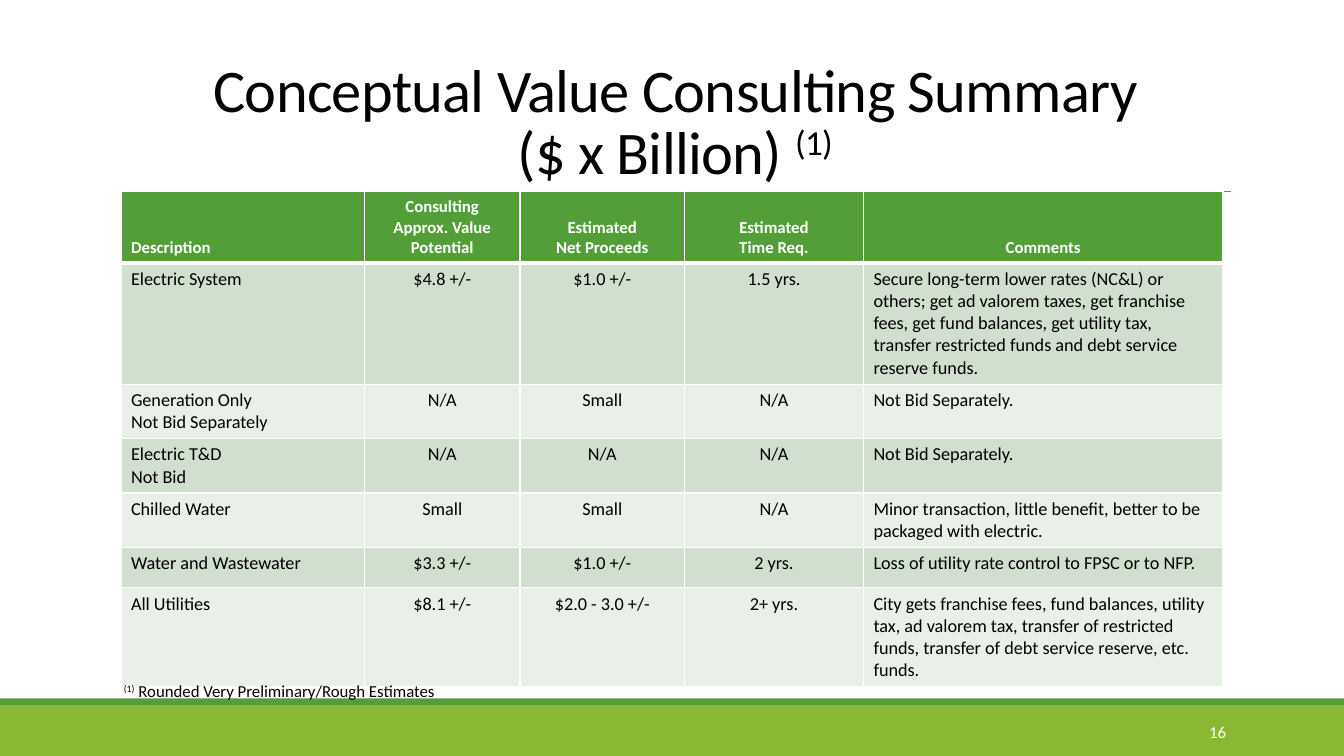
from lxml.etree import SubElement
from pptx import Presentation
from pptx.dml.color import RGBColor
from pptx.enum.shapes import MSO_CONNECTOR, MSO_SHAPE
from pptx.enum.text import MSO_ANCHOR, MSO_AUTO_SIZE, PP_ALIGN
from pptx.oxml.ns import qn
from pptx.util import Inches, Pt

GRID_COLUMNS, GRID_ROWS = 160, 90
GREEN, LIME, WHITE, BLACK, GRAY = "549E39", "8AB833", "FFFFFF", "000000", "808080"
BANDS = ("D1DFCE", "E9F0E8")
COLUMN_WIDTHS = (29, 18.5, 19.6, 21.3, 42.8)
ROW_HEIGHTS = (8.3, 13.9, 6.24, 6.24, 6.24, 4.8, 11.4)
VALUES = (
    ("Description", "Consulting\nApprox. Value\nPotential", "Estimated\nNet Proceeds",
     "Estimated\nTime Req.", "Comments"),
    ("Electric System", "$4.8 +/-", "$1.0 +/-", "1.5 yrs.",
     "Secure long-term lower rates (NC&L) or others; get ad valorem taxes, "
     "get franchise fees, get fund balances, get utility tax, transfer "
     "restricted funds and debt service reserve funds."),
    ("Generation Only\nNot Bid Separately", "N/A", "Small", "N/A", "Not Bid Separately."),
    ("Electric T&D\nNot Bid", "N/A", "N/A", "N/A", "Not Bid Separately."),
    ("Chilled Water", "Small", "Small", "N/A",
     "Minor transaction, little benefit, better to be packaged with electric."),
    ("Water and Wastewater", "$3.3 +/-", "$1.0 +/-", "2 yrs.",
     "Loss of utility rate control to FPSC or to NFP."),
    ("All Utilities", "$8.1 +/-", "$2.0 - 3.0 +/-", "2+ yrs.",
     "City gets franchise fees, fund balances, utility tax, ad valorem tax, "
     "transfer of restricted funds, transfer of debt service reserve, etc. funds."),
)


def color(value):
    return RGBColor.from_string(value)


def write(frame, text, size=12, fill=BLACK, bold=False, align=PP_ALIGN.LEFT,
          anchor=MSO_ANCHOR.TOP, line_spacing=None, tracking=None):
    """Lines become paragraphs, | breaks a line and ^ marks superscript."""
    frame.word_wrap = True
    frame.vertical_anchor = anchor
    for index, line in enumerate(text.split("\n")):
        paragraph = frame.add_paragraph() if index else frame.paragraphs[0]
        paragraph.alignment = align
        paragraph.line_spacing = line_spacing
        for part_index, part in enumerate(line.split("|")):
            if part_index:
                paragraph.add_line_break()
            for piece_index, piece in enumerate(part.split("^")):
                if not piece:
                    continue
                run = paragraph.add_run()
                run.text = piece
                run.font.name = "Calibri"
                run.font.size = Pt(size)
                run.font.bold = bold
                run.font.color.rgb = color(fill)
                properties = run.font._element
                if tracking is not None:
                    properties.set("spc", str(int(tracking * 100)))
                if piece_index % 2:
                    properties.set("baseline", "30000")


class SlideBuilder:
    def __init__(self, presentation):
        self.column = presentation.slide_width / GRID_COLUMNS
        self.row = presentation.slide_height / GRID_ROWS
        self.slide = presentation.slides.add_slide(presentation.slide_layouts[5])

    def area(self, left, top, width, height):
        return (round(left * self.column), round(top * self.row),
                round(width * self.column), round(height * self.row))

    def band(self, place, fill):
        shape = self.slide.shapes.add_shape(MSO_SHAPE.RECTANGLE, *self.area(*place))
        shape.shadow.inherit = False
        shape.fill.solid()
        shape.fill.fore_color.rgb = color(fill)
        shape.line.fill.background()

    def rule(self, left, right, top):
        start_x, start_y, end_x, end_y = self.area(left, top, right, top)
        connector = self.slide.shapes.add_connector(
            MSO_CONNECTOR.STRAIGHT, start_x, start_y, end_x, end_y)
        connector.line.color.rgb = color(GRAY)
        connector.line.width = Pt(0.5)
        SubElement(connector._element.spPr, qn("a:effectLst"))

    def title(self, place, text, **style):
        shape = self.slide.shapes.title
        shape.left, shape.top, shape.width, shape.height = self.area(*place)
        shape.text_frame.auto_size = MSO_AUTO_SIZE.NONE
        write(shape.text_frame, text, **style)

    def text(self, place, text, **style):
        shape = self.slide.shapes.add_textbox(*self.area(*place))
        write(shape.text_frame, text, anchor=MSO_ANCHOR.MIDDLE, **style)

    def borders(self, cell, widths):
        properties = cell._tc.get_or_add_tcPr()
        for side, width in widths.items():
            line = SubElement(properties, qn(f"a:ln{side}"), w=str(Pt(width)))
            SubElement(SubElement(line, qn("a:solidFill")), qn("a:srgbClr"), val=WHITE)

    def table(self, left, top):
        place = self.area(left, top, sum(COLUMN_WIDTHS), sum(ROW_HEIGHTS))
        table = self.slide.shapes.add_table(
            len(ROW_HEIGHTS), len(COLUMN_WIDTHS), *place).table
        table.horz_banding = False
        for column, width in zip(table.columns, COLUMN_WIDTHS):
            column.width = round(width * self.column)
        for row, height in zip(table.rows, ROW_HEIGHTS):
            row.height = round(height * self.row)
        last_column = len(COLUMN_WIDTHS) - 1
        for row_index, row_values in enumerate(VALUES):
            header = row_index == 0
            for column_index, value in enumerate(row_values):
                cell = table.cell(row_index, column_index)
                self.borders(cell, {"L": 1, "R": 1, "T": 3 if row_index == 1 else 1,
                                    "B": 3 if header else 1})
                cell.fill.solid()
                cell.fill.fore_color.rgb = color(GREEN if header else BANDS[(row_index - 1) % 2])
                left_aligned = column_index == 0 or (column_index == last_column and not header)
                write(cell.text_frame, value, size=12 if header else 13,
                      fill=WHITE if header else BLACK, bold=header,
                      align=PP_ALIGN.LEFT if left_aligned else PP_ALIGN.CENTER)
                cell.vertical_anchor = MSO_ANCHOR.BOTTOM if header else MSO_ANCHOR.TOP


def main():
    presentation = Presentation()
    presentation.slide_width = Inches(13.333)
    presentation.slide_height = Inches(7.5)
    builder = SlideBuilder(presentation)
    builder.band((0, 84, GRID_COLUMNS, 6), LIME)
    builder.band((0, 83.16, GRID_COLUMNS, 0.84), GREEN)
    builder.rule(15.72, 146.52, 22.8)
    builder.title((14.4, 12.36, 132, 10.44),
                  "Conceptual Value Consulting Summary|($ x Billion) ^(1)",
                  size=43.2, align=PP_ALIGN.CENTER, anchor=MSO_ANCHOR.BOTTOM,
                  line_spacing=0.85, tracking=-0.5)
    builder.table(14.4, 22.8)
    builder.text((130, 84.72, 17.16, 4.8), "16", fill=WHITE, align=PP_ALIGN.RIGHT)
    builder.text((13.56, 79.8, 39.6, 4.8), "^(1)^ Rounded Very Preliminary/Rough Estimates")
    presentation.save("out.pptx")


if __name__ == "__main__":
    main()
